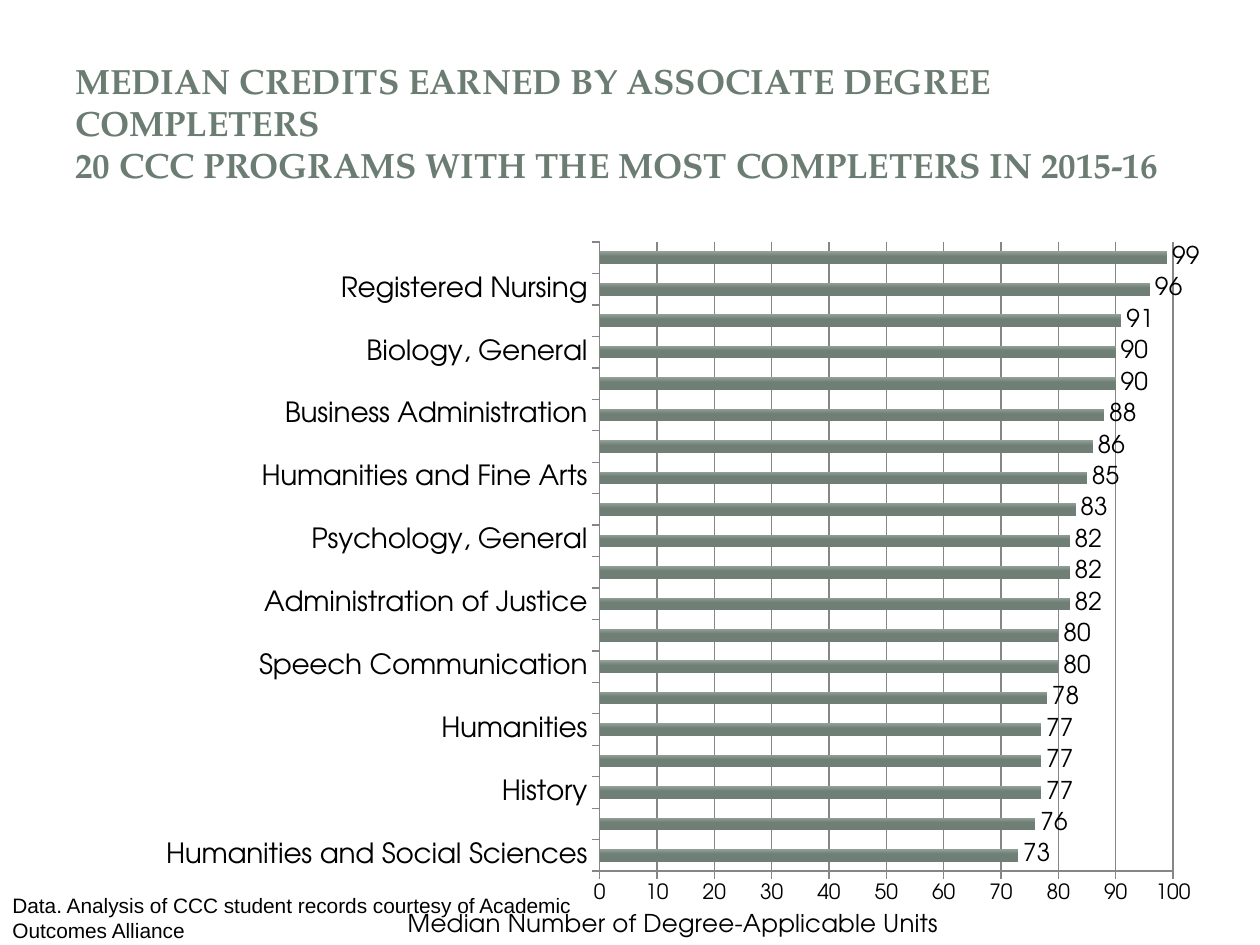
from lxml import etree
from pptx import Presentation
from pptx.chart.data import CategoryChartData
from pptx.dml.color import RGBColor
from pptx.enum.chart import XL_CHART_TYPE as ChartType, XL_LABEL_POSITION as LabelPosition
from pptx.enum.chart import XL_TICK_MARK as TickMark
from pptx.oxml.ns import qn
from pptx.util import Emu, Pt

SCALE = 914400 / 126  # EMU per px
BLACK = RGBColor(0x00, 0x00, 0x00)
GREEN = RGBColor(0x6B, 0x7D, 0x72)
BAR_LIGHT = RGBColor(0x93, 0xA2, 0x99)
BAR_DARK = RGBColor(0x6F, 0x7F, 0x76)
GRAY = RGBColor(0x86, 0x86, 0x86)
CHART_FONT = "TeX Gyre Adventor"

PROGRAMS = [
    ("Humanities and Social Sciences", 73),
    ("Liberal Studies (teaching preparation)", 76),
    ("History", 77),
    ("Liberal Arts and Sciences, General", 77),
    ("Humanities", 77),
    ("Sociology", 78),
    ("Speech Communication", 80),
    ("English", 80),
    ("Administration of Justice", 82),
    ("Accounting", 82),
    ("Psychology, General", 82),
    ("Business and Commerce, General", 83),
    ("Humanities and Fine Arts", 85),
    ("Child Development/Early Care and Education", 86),
    ("Business Administration", 88),
    ("Social Sciences, General", 90),
    ("Biology, General", 90),
    ("Biological and Physical Sciences (and Mathematics)", 91),
    ("Registered Nursing", 96),
    ("Mathematics, General", 99),
]


def px(*lengths):
    return [Emu(round(length * SCALE)) for length in lengths]


def set_layout(parent, index, values):
    """Place a chart part by fractions of the chart area."""
    for old in parent.findall(qn("c:layout")):
        parent.remove(old)
    layout = etree.Element(qn("c:layout"))
    manual = etree.SubElement(layout, qn("c:manualLayout"))
    for name, value in values.items():
        etree.SubElement(manual, qn(f"c:{name}")).set("val", str(value))
    parent.insert(index, layout)


presentation = Presentation()
presentation.slide_width, presentation.slide_height = px(1260, 945)
slide = presentation.slides.add_slide(presentation.slide_layouts[6])

# Chart
data = CategoryChartData()
data.categories = [program for program, units in PROGRAMS]
data.add_series("Series 1", [units for program, units in PROGRAMS])
chart = slide.shapes.add_chart(ChartType.BAR_CLUSTERED, *px(0, 219, 1260, 726), data).chart
chart.has_legend = False
chart.has_title = False
plot = chart.plots[0]
plot.gap_width = 150
plot.vary_by_categories = False
set_layout(chart._chartSpace.chart.plotArea, 0, {
    "layoutTarget": "inner", "xMode": "edge", "yMode": "edge",
    "x": 0.476, "y": 0.032, "w": 0.455, "h": 0.869})

# Bars
fill = plot.series[0].format.fill
fill.gradient()
fill.gradient_angle = 270
for stop, color in zip(fill.gradient_stops, (BAR_LIGHT, BAR_DARK)):
    stop.color.rgb = color
fill.gradient_stops[1].position = 0.4

# Value labels
plot.has_data_labels = True
labels = plot.data_labels
for name, value in {"show_value": True, "position": LabelPosition.OUTSIDE_END,
                    "number_format": "#,##0", "number_format_is_linked": False}.items():
    setattr(labels, name, value)

# Axes
category_axis, value_axis = chart.category_axis, chart.value_axis
for name, value in {"minimum_scale": 0, "maximum_scale": 100, "major_unit": 10,
                    "has_major_gridlines": True}.items():
    setattr(value_axis, name, value)
for axis in (category_axis, value_axis):
    axis.major_tick_mark = TickMark.OUTSIDE
    axis.minor_tick_mark = TickMark.NONE
    axis.format.line.color.rgb = GRAY
value_axis.major_gridlines.format.line.color.rgb = GRAY

# Value axis title
axis_title = value_axis.axis_title
axis_title.text_frame.text = "Median Number of Degree-Applicable Units"
set_layout(axis_title._element, 1, {"xMode": "edge", "yMode": "edge", "x": 0.32, "y": 0.95})

# Chart fonts
title_font = axis_title.text_frame.paragraphs[0].runs[0].font
for font, size in ((chart.font, 18), (category_axis.tick_labels.font, 16),
                   (value_axis.tick_labels.font, 12), (labels.font, 14), (title_font, 14)):
    for name, value in {"name": CHART_FONT, "size": Pt(size), "bold": False}.items():
        setattr(font, name, value)
    font.color.rgb = BLACK

# Source note and heading
TEXTS = [
    ((0, 887, 585, 88),
     "Data. Analysis of CCC student records courtesy of Academic Outcomes Alliance",
     {"name": "Arial", "size": Pt(11.9), "bold": False}, BLACK),
    ((63, 53, 1148, 47),
     "MEDIAN CREDITS EARNED BY ASSOCIATE DEGREE COMPLETERS\v"
     "20 CCC PROGRAMS WITH THE MOST COMPLETERS IN 2015-16",
     {"name": "TeX Gyre Pagella", "size": Pt(20), "bold": True}, GREEN),
]
for box, text, font_values, color in TEXTS:
    frame = slide.shapes.add_textbox(*px(*box)).text_frame
    frame.word_wrap = True
    paragraph = frame.paragraphs[0]
    paragraph.text = text
    for run in paragraph.runs:
        for name, value in font_values.items():
            setattr(run.font, name, value)
        run.font.color.rgb = color

presentation.save("out.pptx")
